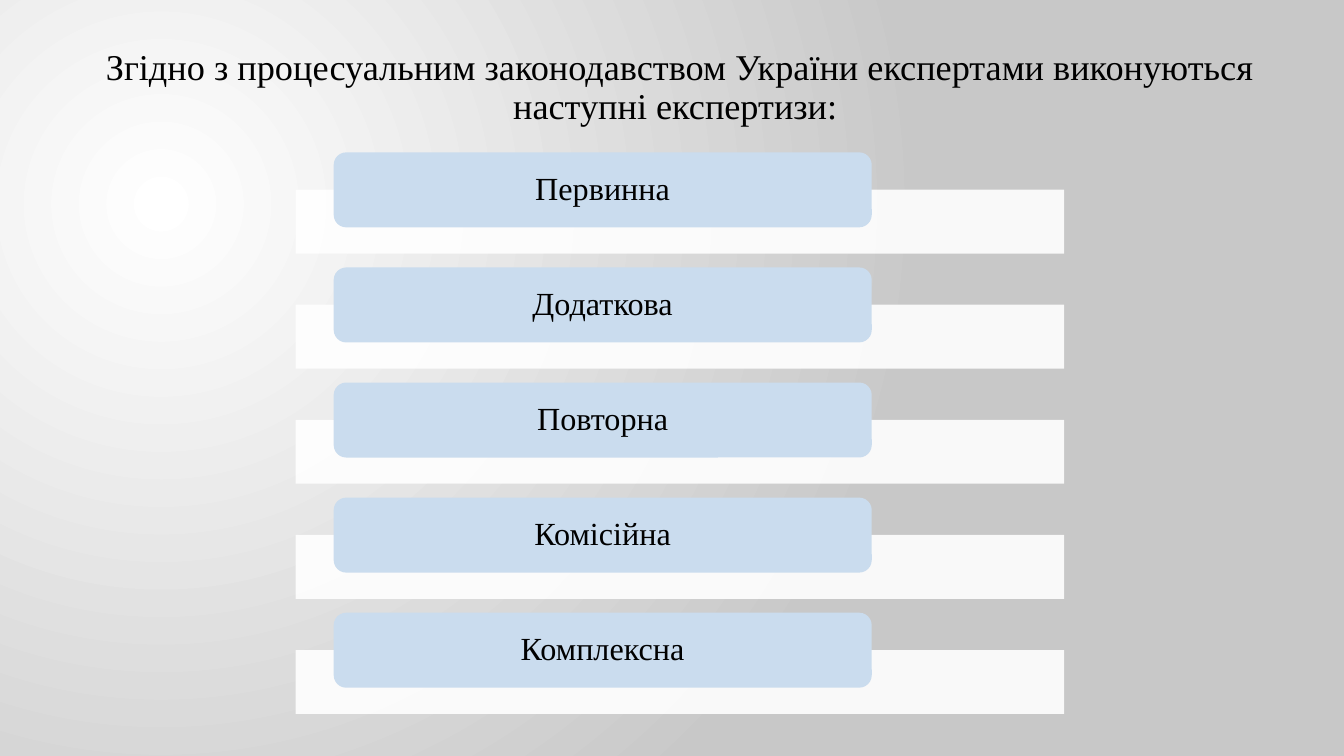
from pptx import Presentation
from pptx.dml.color import RGBColor
from pptx.enum.shapes import MSO_SHAPE as Preset
from pptx.enum.text import MSO_ANCHOR as Anchor, PP_ALIGN as Align
from pptx.oxml import parse_xml
from pptx.oxml.ns import nsdecls, qn
from pptx.util import Cm, Pt

BLACK = RGBColor(0x00, 0x00, 0x00)
WHITE = RGBColor(0xFF, 0xFF, 0xFF)
GREY = RGBColor(0xC8, 0xC8, 0xC8)
PALE_BLUE = RGBColor(0xCA, 0xDC, 0xEE)

FONT = "Times New Roman"
TITLE = ("Згідно з процесуальним законодавством України експертами "
         "виконуються наступні експертизи: ")
EXAMINATIONS = ["Первинна", "Додаткова", "Повторна", "Комісійна", "Комплексна"]
FIRST_TOP = 3.84
PITCH = 2.9
BAR_DROP = 0.94

TITLE_FRAME = {"word_wrap": True, "vertical_anchor": Anchor.TOP}
TAB_FRAME = {"word_wrap": True, "vertical_anchor": Anchor.MIDDLE,
             "margin_left": Cm(0.5), "margin_right": Cm(0.5),
             "margin_top": 0, "margin_bottom": 0}
TITLE_PARA = {"alignment": Align.CENTER, "line_spacing": 0.9, "space_before": Pt(10)}
TAB_PARA = {"alignment": Align.CENTER, "line_spacing": 0.9}


def apply_format(target, values):
    for name, value in values.items():
        setattr(target, name, value)


def paint_background(page):
    fill = page.background.fill
    fill.gradient()
    for stop, color in zip(fill.gradient_stops, (WHITE, GREY)):
        stop.color.rgb = color
    gradient = page.background._cSld.find(".//" + qn("a:gradFill"))
    linear = gradient.find(qn("a:lin"))
    gradient.replace(linear, parse_xml(
        f'<a:path {nsdecls("a")} path="circle">'
        '<a:fillToRect l="50000" t="55000" r="125000" b="100000"/></a:path>'))


def write_text(box, text, size, frame_format, para_format):
    frame = box.text_frame
    apply_format(frame, frame_format)
    para = frame.paragraphs[0]
    apply_format(para, para_format)
    span = para.add_run()
    span.text = text
    apply_format(span.font, {"name": FONT, "size": Pt(size)})
    span.font.color.rgb = BLACK


def add_title(page):
    box = page.shapes.add_textbox(Cm(2.11), Cm(1.12), Cm(30.05), Cm(2.34))
    write_text(box, TITLE, 25.9, TITLE_FRAME, TITLE_PARA)


def add_block(page, preset, left, top, width, height, color):
    box = page.shapes.add_shape(preset, Cm(left), Cm(top), Cm(width), Cm(height))
    box.shadow.inherit = False
    box.fill.solid()
    box.fill.fore_color.rgb = color
    box.line.fill.background()
    return box


def add_bar(page, top):
    bar = add_block(page, Preset.RECTANGLE, 7.45, top, 19.37, 1.61, WHITE)
    color = bar._element.spPr.find(".//" + qn("a:srgbClr"))
    color.append(parse_xml(f'<a:alpha {nsdecls("a")} val="90000"/>'))


def add_tab(page, top, text):
    tab = add_block(page, Preset.ROUNDED_RECTANGLE, 8.41, top, 13.56, 1.89, PALE_BLUE)
    write_text(tab, text, 23, TAB_FRAME, TAB_PARA)


def main():
    deck = Presentation()
    apply_format(deck, {"slide_width": Cm(33.87), "slide_height": Cm(19.05)})
    page = deck.slides.add_slide(deck.slide_layouts[6])
    paint_background(page)
    add_title(page)
    for index, examination in enumerate(EXAMINATIONS):
        top = FIRST_TOP + index * PITCH
        add_bar(page, top + BAR_DROP)
        add_tab(page, top, examination)
    deck.save("out.pptx")


if __name__ == "__main__":
    main()
